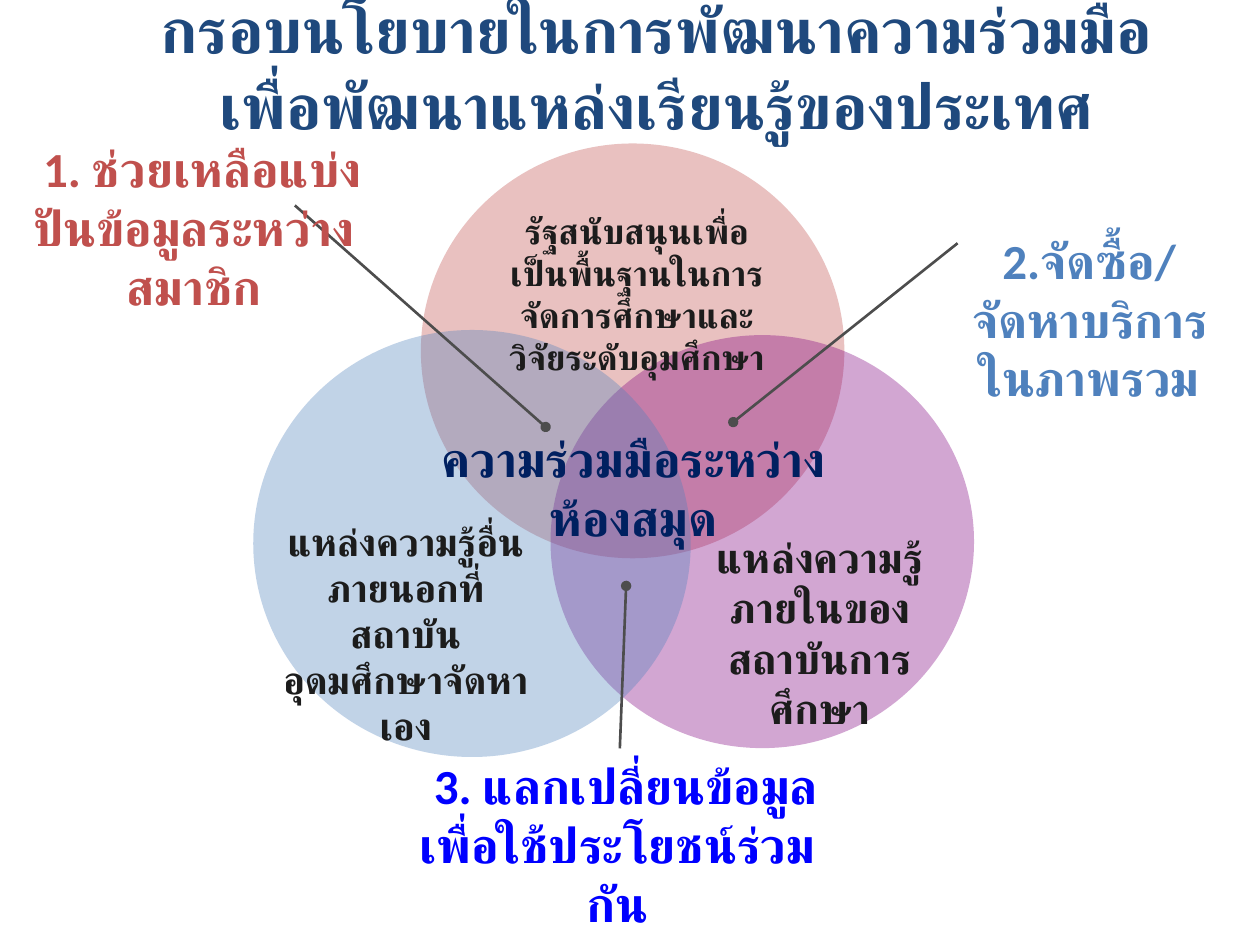
from dataclasses import dataclass

from lxml import etree
from pptx import Presentation
from pptx.dml.color import RGBColor
from pptx.enum.shapes import MSO_CONNECTOR, MSO_SHAPE
from pptx.enum.text import MSO_ANCHOR, MSO_AUTO_SIZE, PP_ALIGN
from pptx.oxml.ns import qn
from pptx.util import Pt

OVAL = MSO_SHAPE.OVAL
STRAIGHT = MSO_CONNECTOR.STRAIGHT
CENTER = PP_ALIGN.CENTER
MIDDLE = MSO_ANCHOR.MIDDLE
NO_FIT = MSO_AUTO_SIZE.NONE
GROW = MSO_AUTO_SIZE.SHAPE_TO_FIT_TEXT
TITLE_ONLY = 5


@dataclass(frozen=True)
class Theme:
    font: str = "Calibri"
    # Colours
    title: str = "1F497D"
    red: str = "C0504D"
    purple: str = "800080"
    blue: str = "4F81BD"
    navy: str = "002060"
    bright_blue: str = "0000FF"
    ink: str = "1C1C1C"
    leader: str = "4D4D4D"
    # Type sizes and strengths
    title_size: int = 36
    label_size: int = 28
    state_size: int = 20
    internal_size: int = 24
    external_size: int = 22
    leader_width: float = 1.5
    circle_opacity: int = 35


THEME = Theme()


def points(values):
    return [Pt(value) for value in values]


def add_span(para, text, size, color):
    """Add one bold run, with the same font for Latin and Thai letters."""
    span = para.add_run()
    span.text = text
    span.font.name = THEME.font
    span.font.size = Pt(size)
    span.font.bold = True
    span.font.color.rgb = RGBColor.from_string(color)
    thai_font = etree.SubElement(span.font._element, qn("a:cs"))
    thai_font.set("typeface", THEME.font)


def set_title(page, lines, place):
    title = page.shapes.title
    title.left, title.top, title.width, title.height = points(place)
    frame = title.text_frame
    frame.word_wrap = True
    frame.auto_size = NO_FIT
    frame.vertical_anchor = MIDDLE
    para = frame.paragraphs[0]
    para.alignment = CENTER
    for number, line in enumerate(lines):
        if number:
            para.add_line_break()
        add_span(para, line, THEME.title_size, THEME.title)


def add_circle(page, place, color):
    circle = page.shapes.add_shape(OVAL, *points(place))
    circle.shadow.inherit = False
    circle.line.fill.background()
    circle.fill.solid()
    circle.fill.fore_color.rgb = RGBColor.from_string(color)
    color_node = circle._element.spPr.find(".//" + qn("a:srgbClr"))
    alpha = etree.SubElement(color_node, qn("a:alpha"))
    alpha.set("val", str(THEME.circle_opacity * 1000))


def add_leader(page, start, end):
    """Draw a line with a round dot at its start."""
    leader = page.shapes.add_connector(STRAIGHT, *points(start + end))
    leader.line.width = Pt(THEME.leader_width)
    leader.line.color.rgb = RGBColor.from_string(THEME.leader)
    dot = etree.SubElement(leader.line._get_or_add_ln(), qn("a:headEnd"))
    dot.set("type", "oval")
    etree.SubElement(leader._element.spPr, qn("a:effectLst"))


def add_text(page, text, place, size, color, margin=0, indent=0):
    box = page.shapes.add_textbox(*points(place))
    frame = box.text_frame
    frame.word_wrap = True
    frame.auto_size = GROW
    para = frame.paragraphs[0]
    para.alignment = CENTER
    if margin:
        properties = para._p.get_or_add_pPr()
        properties.set("marL", str(Pt(margin)))
        properties.set("indent", str(Pt(indent)))
    add_span(para, text, size, color)


def main():
    deck = Presentation()
    deck.slide_width, deck.slide_height = Pt(720), Pt(540)
    page = deck.slides.add_slide(deck.slide_layouts[TITLE_ONLY])

    set_title(page, ["กรอบนโยบายในการพัฒนาความร่วมมือ",
                     "เพื่อพัฒนาแหล่งเรียนรู้ของประเทศ"], (51, -7.2, 648, 90))

    # Three overlapping circles
    add_circle(page, (240.5, 82, 242, 237), THEME.red)
    add_circle(page, (314.6, 191.5, 242, 236), THEME.purple)
    add_circle(page, (144.7, 188.6, 250, 244), THEME.blue)

    # Leaders from the overlaps to their labels
    add_leader(page, (311.8, 244), (168.5, 117.4))
    add_leader(page, (419, 241.2), (547.2, 139))
    add_leader(page, (357.8, 334.8), (354.2, 427.7))

    # Centre of the diagram
    add_text(page, "ความร่วมมือระหว่างห้องสมุด", (242, 241.2, 240, 41),
             THEME.label_size, THEME.navy)

    # Numbered labels around the circles
    labels = [
        ("1. ช่วยเหลือแบ่งปันข้อมูลระหว่างสมาชิก",
         (-16.5, 75.6, 245, 75), THEME.red, 9.6),
        ("2.จัดซื้อ/จัดหาบริการในภาพรวม",
         (537, 128, 161.3, 75), THEME.blue, 0),
        ("3. แลกเปลี่ยนข้อมูลเพื่อใช้ประโยชน์ร่วมกัน",
         (206.6, 428.4, 283, 75), THEME.bright_blue, 9.6),
    ]
    for text, place, color, indent in labels:
        add_text(page, text, place, THEME.label_size, color, 9.4, indent)

    # Descriptions inside the circles
    descriptions = [
        ("รัฐสนับสนุนเพื่อเป็นพื้นฐานในการจัดการศึกษาและวิจัยระดับอุมศึกษา",
         (282.2, 116, 163.4, 80), THEME.state_size),
        ("แหล่งความรู้ภายในของสถาบันการศึกษา",
         (388, 300.2, 161.3, 65.5), THEME.internal_size),
        ("แหล่งความรู้อื่นภายนอกที่สถาบันอุดมศึกษาจัดหาเอง",
         (150.5, 292.3, 162.7, 87), THEME.external_size),
    ]
    for text, place, size in descriptions:
        add_text(page, text, place, size, THEME.ink)

    deck.save("out.pptx")


if __name__ == "__main__":
    main()
